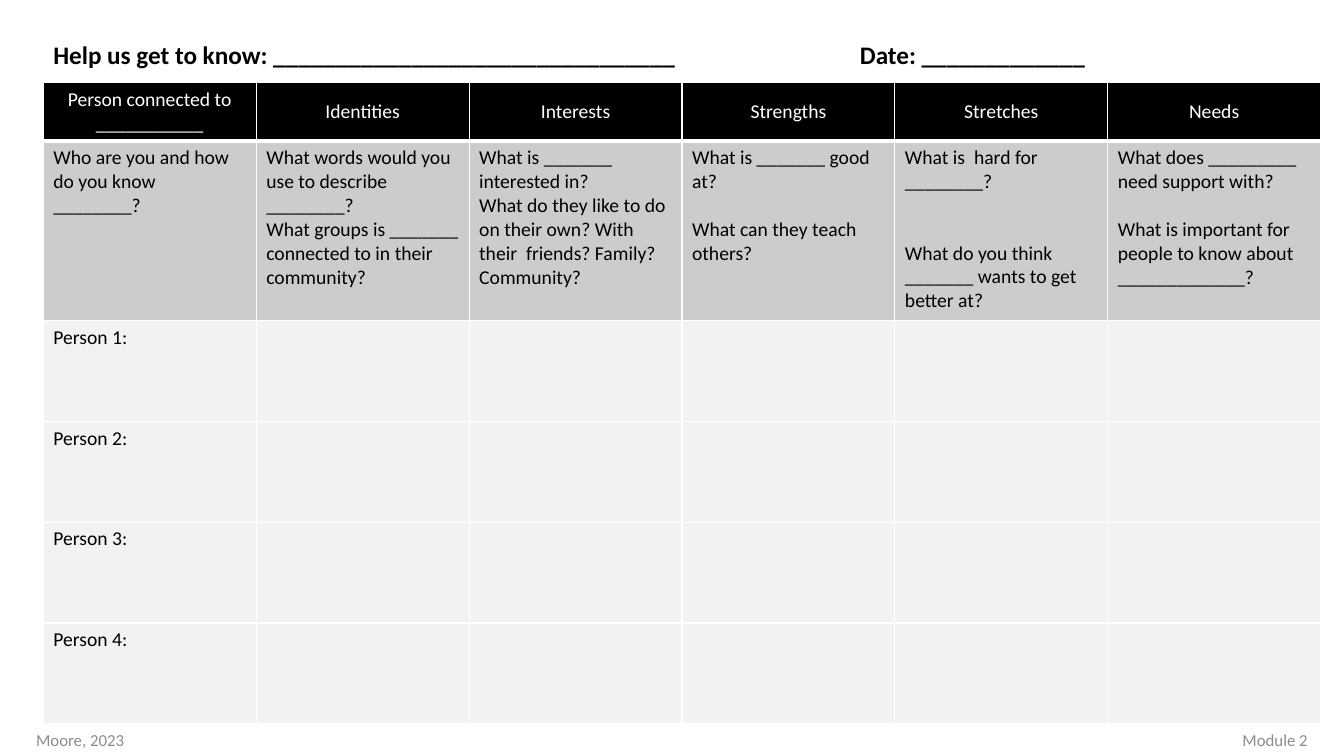
from pptx import Presentation
from pptx.dml.color import RGBColor
from pptx.enum.text import MSO_ANCHOR, PP_ALIGN
from pptx.oxml import parse_xml
from pptx.oxml.ns import nsdecls
from pptx.util import Inches, Pt

BLACK = RGBColor(0x00, 0x00, 0x00)
WHITE = RGBColor(0xFF, 0xFF, 0xFF)
QUESTION_GRAY = RGBColor(0xCC, 0xCC, 0xCC)
ANSWER_GRAY = RGBColor(0xF2, 0xF2, 0xF2)
FOOTER_GRAY = RGBColor(0x8C, 0x8C, 0x8C)

BLANK_LINE = 17  # points taken by one line of 14 pt text
ROW_HEIGHTS = [0.58, 1.78, 1, 1, 1, 1]
PEOPLE = 4

# Each topic: heading, its questions, blank lines between the questions
TOPICS = [
    ("Person connected to ___________",
     ["Who are you and how do you know ________?"], 0),
    ("Identities",
     ["What words would you use to describe ________?",
      "What groups is _______ connected to in their community?"], 0),
    ("Interests",
     ["What is _______ interested in?",
      "What do they like to do on their own? With their  friends? Family? Community?"], 0),
    ("Strengths",
     ["What is _______ good at?", "What can they teach others?"], 1),
    ("Stretches",
     ["What is  hard for ________?",
      "What do you think _______ wants to get better at?"], 2),
    ("Needs",
     ["What does _________ need support with?",
      "What is important for people to know about _____________?"], 1),
]


def style_paragraph(paragraph, size, color, bold=False, align=PP_ALIGN.LEFT):
    paragraph.alignment = align
    font = paragraph.font
    font.name = "Calibri"
    font.size = Pt(size)
    font.bold = bold
    font.color.rgb = color


def add_tab_stop(paragraph, position):
    paragraph._p.get_or_add_pPr().append(parse_xml(
        f'<a:tabLst {nsdecls("a")}><a:tab pos="{position}" algn="l"/></a:tabLst>'))


def add_text(slide, text, left, top, width, size, color, bold=False,
             align=PP_ALIGN.LEFT, anchor=MSO_ANCHOR.TOP, tab_stop=None):
    box = slide.shapes.add_textbox(Inches(left), Inches(top), Inches(width), Inches(0.4))
    frame = box.text_frame
    frame.word_wrap = True
    frame.vertical_anchor = anchor
    paragraph = frame.paragraphs[0]
    paragraph.text = text
    if tab_stop:
        add_tab_stop(paragraph, Inches(tab_stop))
    style_paragraph(paragraph, size, color, bold, align)


def add_borders(cell, bottom_width):
    """Draw white borders; call before the cell is filled."""
    properties = cell._tc.get_or_add_tcPr()
    for side, width in (("L", 1), ("R", 1), ("T", 1), ("B", bottom_width)):
        properties.append(parse_xml(
            f'<a:ln{side} {nsdecls("a")} w="{Pt(width)}"><a:solidFill>'
            f'<a:srgbClr val="{WHITE}"/></a:solidFill></a:ln{side}>'))


def fill_cell(cell, fill, lines=(), color=BLACK, gap=0, align=PP_ALIGN.LEFT,
              anchor=MSO_ANCHOR.TOP, bottom_width=1):
    add_borders(cell, bottom_width)
    cell.fill.solid()
    cell.fill.fore_color.rgb = fill
    cell.vertical_anchor = anchor
    cell.text = "\n".join(lines)
    for index, paragraph in enumerate(cell.text_frame.paragraphs):
        if index and gap:
            paragraph.space_before = Pt(gap)
        style_paragraph(paragraph, 14, color, align=align)


def add_profile_table(slide):
    table = slide.shapes.add_table(
        len(ROW_HEIGHTS), len(TOPICS), Inches(0.43), Inches(0.82),
        Inches(12.67), Inches(sum(ROW_HEIGHTS))).table
    for row, height in zip(table.rows, ROW_HEIGHTS):
        row.height = Inches(height)
    for column, (heading, questions, blank_lines) in enumerate(TOPICS):
        fill_cell(table.cell(0, column), BLACK, [heading], WHITE,
                  align=PP_ALIGN.CENTER, anchor=MSO_ANCHOR.MIDDLE, bottom_width=3)
        fill_cell(table.cell(1, column), QUESTION_GRAY, questions,
                  gap=blank_lines * BLANK_LINE)
        for person in range(1, PEOPLE + 1):
            label = [f"Person {person}:"] if column == 0 else []
            fill_cell(table.cell(person + 1, column), ANSWER_GRAY, label)


def main():
    presentation = Presentation()
    presentation.slide_width = Inches(13.33)
    presentation.slide_height = Inches(7.5)
    slide = presentation.slides.add_slide(presentation.slide_layouts[6])

    add_profile_table(slide)
    add_text(slide, "Help us get to know: ________________________________\tDate: _____________",
             0.43, 0.34, 12.48, 18, BLACK, bold=True, tab_stop=8)
    add_text(slide, "Moore, 2023", 0.26, 7.14, 4.5, 12, FOOTER_GRAY,
             anchor=MSO_ANCHOR.MIDDLE)
    add_text(slide, "Module 2", 8.57, 7.14, 4.5, 12, FOOTER_GRAY,
             align=PP_ALIGN.RIGHT, anchor=MSO_ANCHOR.MIDDLE)
    presentation.save("out.pptx")


if __name__ == "__main__":
    main()
